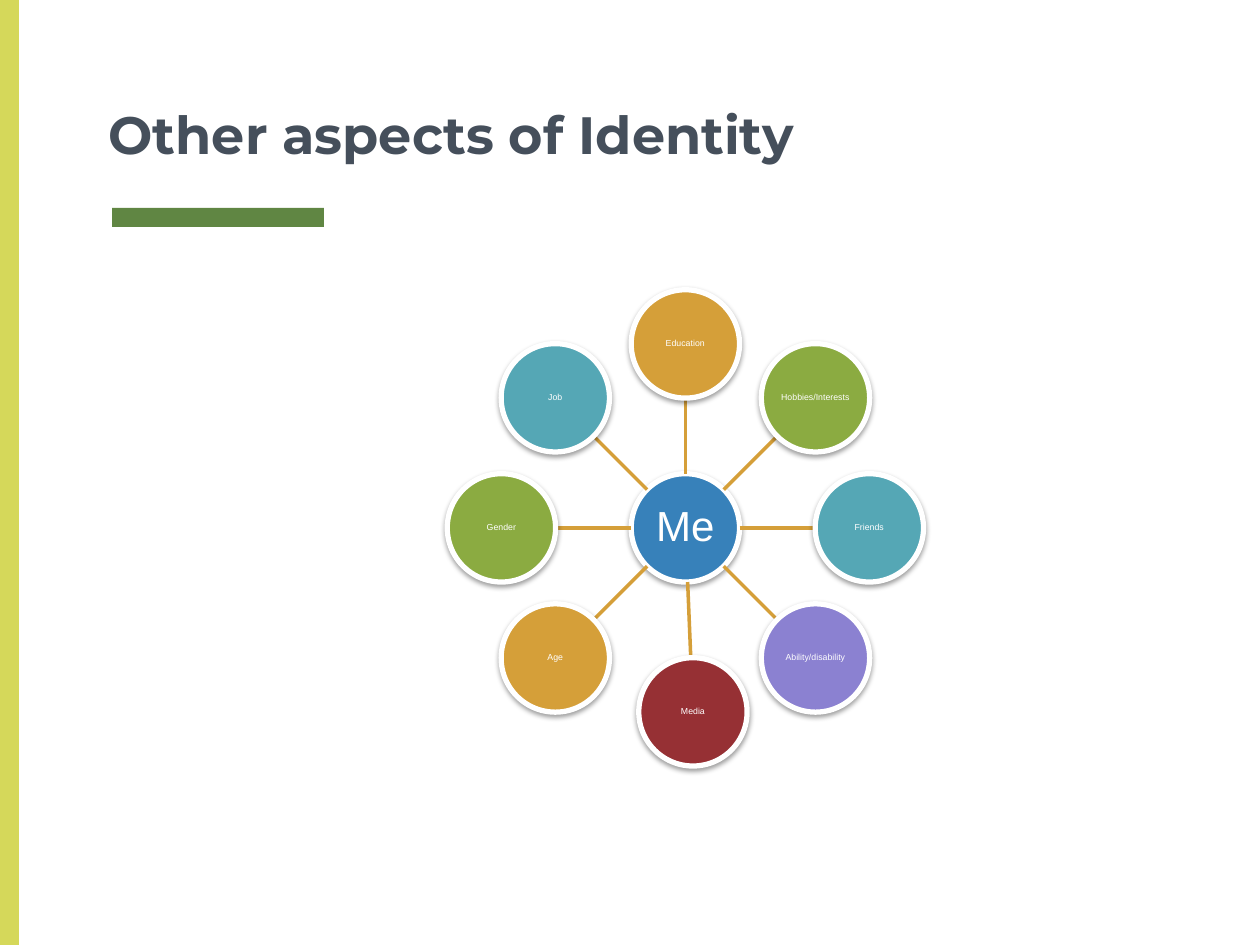
import math
from typing import NamedTuple

import pptx
import pptx.dml.color
import pptx.enum.shapes
import pptx.enum.text
import pptx.oxml
import pptx.oxml.ns
import pptx.util

RGB = pptx.dml.color.RGBColor
LIME = RGB(0xD5, 0xD8, 0x5A)
GREEN = RGB(0x60, 0x86, 0x43)
SLATE = RGB(0x45, 0x4F, 0x5B)
WHITE = RGB(0xFF, 0xFF, 0xFF)
BLUE = RGB(0x37, 0x81, 0xBA)
GOLD = RGB(0xD5, 0x9F, 0x39)
OLIVE = RGB(0x8B, 0xAB, 0x41)
TEAL = RGB(0x55, 0xA7, 0xB5)
LILAC = RGB(0x8B, 0x81, 0xD1)
RED = RGB(0x96, 0x30, 0x34)

# Grid of 100 columns by 75 rows, with square cells
CELL = pptx.util.Inches(10) / 100
COLS, ROWS = 100, 75
HUB_X, HUB_Y = 54.4, 41.9
REACH = 14.6   # hub centre to aspect centre
RADIUS = 4.3

SHADOW = """<a:effectLst xmlns:a="http://schemas.openxmlformats.org/drawingml/2006/main">
<a:outerShdw blurRad="39370" dist="20320" dir="5400000" rotWithShape="0">
<a:srgbClr val="000000"><a:alpha val="38000"/></a:srgbClr></a:outerShdw></a:effectLst>"""


class Aspect(NamedTuple):
    name: str
    fill: RGB
    shift: float = 0   # columns off the regular ring


# Clockwise from the top
ASPECTS = [
    Aspect("Education", GOLD),
    Aspect("Hobbies/Interests", OLIVE),
    Aspect("Friends", TEAL),
    Aspect("Ability/disability", LILAC),
    Aspect("Media", RED, 0.6),
    Aspect("Age", GOLD),
    Aspect("Gender", OLIVE),
    Aspect("Job", TEAL),
]


def grid(*cells: float) -> list[int]:
    """Turn grid cells into slide lengths."""
    return [round(cell * CELL) for cell in cells]


def draw_bar(slide, left: float, top: float, width: float, height: float,
             fill: RGB) -> None:
    bar = slide.shapes.add_shape(pptx.enum.shapes.MSO_SHAPE.RECTANGLE,
                                 *grid(left, top, width, height))
    bar.shadow.inherit = False
    bar.fill.solid()
    bar.fill.fore_color.rgb = fill
    bar.line.fill.background()


def set_text(frame, text: str, face: str, size: float, color: RGB,
             inset: float, bold: bool = False) -> None:
    frame.word_wrap = True
    frame.margin_left = frame.margin_right = pptx.util.Inches(inset)
    frame.margin_top = frame.margin_bottom = pptx.util.Inches(inset)
    frame.text = text
    font = frame.paragraphs[0].runs[0].font
    font.name, font.size, font.bold = face, pptx.util.Pt(size), bold
    font.color.rgb = color


def draw_disc(slide, x: float, y: float, text: str, fill: RGB,
              size: float, inset: float = 0) -> None:
    disc = slide.shapes.add_shape(
        pptx.enum.shapes.MSO_SHAPE.OVAL,
        *grid(x - RADIUS, y - RADIUS, 2 * RADIUS, 2 * RADIUS))
    disc.fill.solid()
    disc.fill.fore_color.rgb = fill
    disc.line.color.rgb = WHITE
    disc.line.width = pptx.util.Pt(3)
    disc._element.spPr.append(pptx.oxml.parse_xml(SHADOW))
    frame = disc.text_frame
    set_text(frame, text, "Arial", size, WHITE, inset)
    frame.vertical_anchor = pptx.enum.text.MSO_ANCHOR.MIDDLE
    line = frame.paragraphs[0]
    line.alignment = pptx.enum.text.PP_ALIGN.CENTER
    line.line_spacing = 0.9


def draw_spoke(slide, x: float, y: float) -> None:
    """Link the rim of the hub to the rim of the disc centred at x, y."""
    span = math.hypot(x - HUB_X, y - HUB_Y)
    dx, dy = ((x - HUB_X) * RADIUS / span, (y - HUB_Y) * RADIUS / span)
    spoke = slide.shapes.add_connector(
        pptx.enum.shapes.MSO_CONNECTOR.STRAIGHT,
        *grid(HUB_X + dx, HUB_Y + dy, x - dx, y - dy))
    spoke.line.color.rgb = GOLD
    spoke.line.width = pptx.util.Pt(2)
    pptx.oxml.ns  # namespace map used by the element below
    spoke._element.spPr.append(
        pptx.oxml.parse_xml('<a:effectLst %s/>' % pptx.oxml.ns.nsdecls("a")))


def main() -> None:
    deck = pptx.Presentation()
    deck.slide_width, deck.slide_height = grid(COLS, ROWS)
    slide = deck.slides.add_slide(deck.slide_layouts[6])

    # Side band and title underline
    draw_bar(slide, 8.9, 16.5, 16.8, 1.5, GREEN)
    draw_bar(slide, 0, 0, 1.5, ROWS, LIME)

    # Title
    title = slide.shapes.add_textbox(*grid(7.6, 0, 84.9, 14.1)).text_frame
    set_text(title, "Other aspects of Identity", "Montserrat", 30, SLATE, 0.1, True)
    title.vertical_anchor = pptx.enum.text.MSO_ANCHOR.BOTTOM

    # Hub, then each spoke with its aspect
    draw_disc(slide, HUB_X, HUB_Y, "Me", BLUE, 24, 0.02)
    for step, aspect in enumerate(ASPECTS):
        turn = math.tau * step / len(ASPECTS)
        x = HUB_X + REACH * math.sin(turn) + aspect.shift
        y = HUB_Y - REACH * math.cos(turn)
        draw_spoke(slide, x, y)
        draw_disc(slide, x, y, aspect.name, aspect.fill, 5)

    deck.save("out.pptx")


if __name__ == "__main__":
    main()
